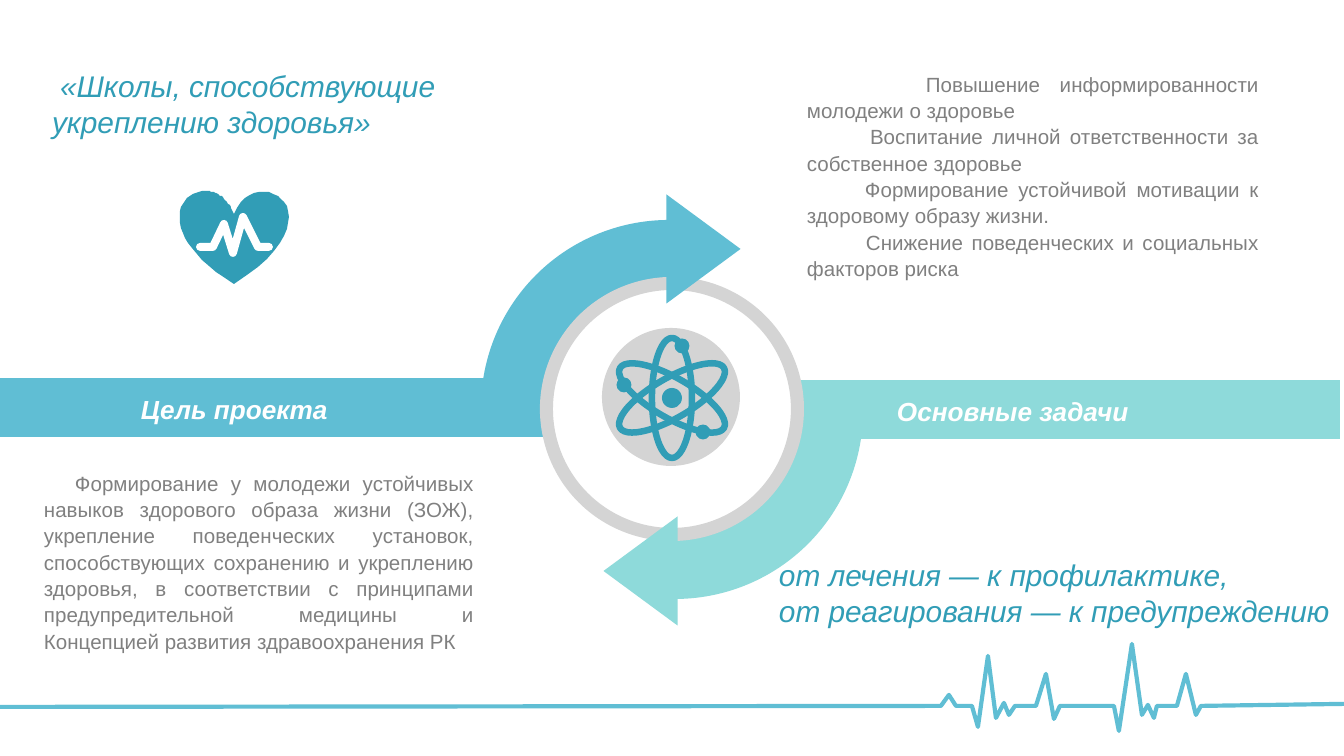
from lxml import etree
from pptx import Presentation
from pptx.dml.color import RGBColor
from pptx.enum.shapes import MSO_SHAPE
from pptx.enum.text import MSO_ANCHOR, PP_ALIGN
from pptx.oxml.ns import qn
from pptx.util import Emu, Pt

RECTANGLE, OVAL = MSO_SHAPE.RECTANGLE, MSO_SHAPE.OVAL
PIE, TRIANGLE = MSO_SHAPE.PIE, MSO_SHAPE.ISOSCELES_TRIANGLE
TOP, MIDDLE = MSO_ANCHOR.TOP, MSO_ANCHOR.MIDDLE
LEFT, JUSTIFY = PP_ALIGN.LEFT, PP_ALIGN.JUSTIFY

SCALE = 914400 / 134.4
BLUE, MINT, TEAL = "60BED4", "8EDADA", "319DB6"
SILVER, GRAY, WHITE = "D4D4D4", "808080", "FFFFFF"
NARROW_INSETS, WIDE_INSETS = (10, 5, 10, 5), (13, 7, 13, 7)


def px(length):
    return Emu(round(length * SCALE))


def color(hex_text):
    return RGBColor.from_string(hex_text)


def curve(start, first, second, end, steps=24):
    """Points along a cubic Bezier curve, without its start."""
    points = []
    for step in range(1, steps + 1):
        t = step / steps
        weights = ((1 - t) ** 3, 3 * t * (1 - t) ** 2, 3 * t * t * (1 - t), t ** 3)
        controls = (start, first, second, end)
        points.append(tuple(sum(w * point[axis] for w, point in zip(weights, controls))
                            for axis in (0, 1)))
    return points


class SlideBuilder:
    font = "Arial"

    def __init__(self, slide):
        self.shapes = slide.shapes

    def paint(self, shape, fill, line, points):
        shape.shadow.inherit = False
        if fill:
            shape.fill.solid()
            shape.fill.fore_color.rgb = color(fill)
        else:
            shape.fill.background()
        if line:
            shape.line.color.rgb = color(line)
            shape.line.width = Pt(points)
        else:
            shape.line.fill.background()
        return shape

    def shape(self, kind, left, top, width, height, fill=None, line=None, points=1, turn=0):
        shape = self.shapes.add_shape(kind, px(left), px(top), px(width), px(height))
        shape.rotation = turn
        return self.paint(shape, fill, line, points)

    def circle(self, center_x, center_y, radius, fill, line=None, points=1):
        return self.shape(OVAL, center_x - radius, center_y - radius,
                          2 * radius, 2 * radius, fill, line, points)

    def quarter(self, left, top, fill, turn=0):
        pie = self.shape(PIE, left, top, 376, 376, fill, turn=turn)
        pie.adjustments[0], pie.adjustments[1] = 107.755, 162

    def outline(self, points, fill):
        builder = self.shapes.build_freeform(*points[0], scale=SCALE)
        builder.add_line_segments(points[1:], close=True)
        return self.paint(builder.convert_to_shape(), fill, None, 0)

    def trace(self, points, line, width):
        """Open line with round ends and joins."""
        builder = self.shapes.build_freeform(*points[0], scale=SCALE)
        builder.add_line_segments(points[1:], close=False)
        shape = self.paint(builder.convert_to_shape(), None, line, width)
        stroke = shape.line._get_or_add_ln()
        stroke.set("cap", "rnd")
        etree.SubElement(stroke, qn("a:round"))

    def set_lines(self, shape, lines, size, ink, insets, anchor=TOP, align=LEFT,
                  spacing=1.0, bold=False, italic=False):
        """Fill a shape with (first-line indent, text) pairs."""
        frame = shape.text_frame
        frame.word_wrap = True
        frame.vertical_anchor = anchor
        (frame.margin_left, frame.margin_top,
         frame.margin_right, frame.margin_bottom) = map(px, insets)
        frame.text = "\n".join(text for _, text in lines)
        for para, (indent, _) in zip(frame.paragraphs, lines):
            para.alignment = align
            para.line_spacing = spacing
            para._p.get_or_add_pPr().set("indent", str(px(indent)))
            for span in para.runs:
                span.font.name = self.font
                span.font.size = Pt(size)
                span.font.bold = bold
                span.font.italic = italic
                span.font.color.rgb = color(ink)

    def text(self, left, top, width, height, lines, size, ink, insets, **style):
        box = self.shapes.add_textbox(px(left), px(top), px(width), px(height))
        self.set_lines(box, lines, size, ink, insets, **style)

    def band(self, left, top, fill, label, inset):
        bar = self.shape(RECTANGLE, left, top, 547, 59, fill)
        self.set_lines(bar, [(0, label)], 14, WHITE, (inset, 5, 10, 5), anchor=MIDDLE,
                       spacing=1.07, bold=True, italic=True)

    def atom(self, center_x, center_y):
        for turn in (0, 60, 120):
            self.shape(OVAL, center_x - 20, center_y - 60, 40, 120,
                       line=TEAL, points=3.5, turn=turn)
        self.circle(center_x, center_y, 10, TEAL)
        for shift_x, shift_y in ((10, -52), (-48, -13), (31, 34)):
            self.circle(center_x + shift_x, center_y + shift_y, 7.5, TEAL)

    def heart(self):
        notch, tip, crest = (234, 214), (234, 284), (206, 191)
        self.outline([crest] + curve(crest, (216, 191), (228, 198), notch)
                     + curve(notch, (257, 159), (345, 214), tip)
                     + curve(tip, (155, 234), (177, 191), crest), TEAL)
        self.trace([(200, 247), (213, 247), (224, 224), (233, 253), (243, 217),
                    (258, 247), (269, 247)], WHITE, 4.25)


def main():
    deck = Presentation()
    deck.slide_width, deck.slide_height = px(1344), px(756)
    page = SlideBuilder(deck.slides.add_slide(deck.slide_layouts[6]))

    page.trace([(0, 707), (941, 706), (949, 695), (956, 706), (972, 706), (978, 727),
                (988, 656), (996, 718), (1004, 703), (1009, 715), (1015, 706),
                (1036, 706), (1046, 674), (1054, 719), (1060, 706), (1114, 706),
                (1119, 731), (1132, 644), (1142, 715), (1148, 705), (1154, 718),
                (1157, 706), (1177, 706), (1186, 674), (1196, 715), (1201, 706),
                (1344, 704)], BLUE, 2.25)

    page.band(0, 378, BLUE, "Цель проекта", 141)
    page.band(793, 380, MINT, "Основные задачи", 104)
    page.quarter(481, 220, BLUE)
    page.quarter(487, 223, MINT, turn=180)
    page.circle(672, 409, 125.5, WHITE, SILVER, 7)
    page.shape(TRIANGLE, 649, 212, 109, 74, BLUE, turn=90)
    page.shape(TRIANGLE, 586, 534, 109, 74, MINT, turn=270)
    page.circle(671, 397, 69, SILVER)

    body = {"align": JUSTIFY, "spacing": 1.07}
    page.text(34, 438, 450, 222, [
        (31, "Формирование у молодежи устойчивых навыков здорового образа жизни (ЗОЖ), "
             "укрепление поведенческих установок, способствующих сохранению и укреплению "
             "здоровья, в соответствии с принципами предупредительной медицины и "
             "Концепцией развития здравоохранения РК"),
    ], 11, GRAY, (10, 31, 10, 5), **body)
    page.text(794, 63, 478, 224, [
        (119, "Повышение информированности молодежи о здоровье"),
        (63, "Воспитание личной ответственности за собственное здоровье"),
        (58, "Формирование устойчивой мотивации к здоровому образу жизни."),
        (59, "Снижение поведенческих и социальных факторов риска"),
    ], 11, GRAY, WIDE_INSETS, **body)
    page.text(42, 63, 562, 82, [(8, "«Школы, способствующие укреплению здоровья»")],
              16, TEAL, NARROW_INSETS, anchor=MIDDLE, italic=True)
    page.text(766, 550, 578, 147, [
        (0, "от лечения — к профилактике,"),
        (0, "от реагирования — к предупреждению"),
    ], 16, TEAL, (13, 7, 0, 7), italic=True)

    page.atom(672, 398)
    page.heart()
    deck.save("out.pptx")


if __name__ == "__main__":
    main()
